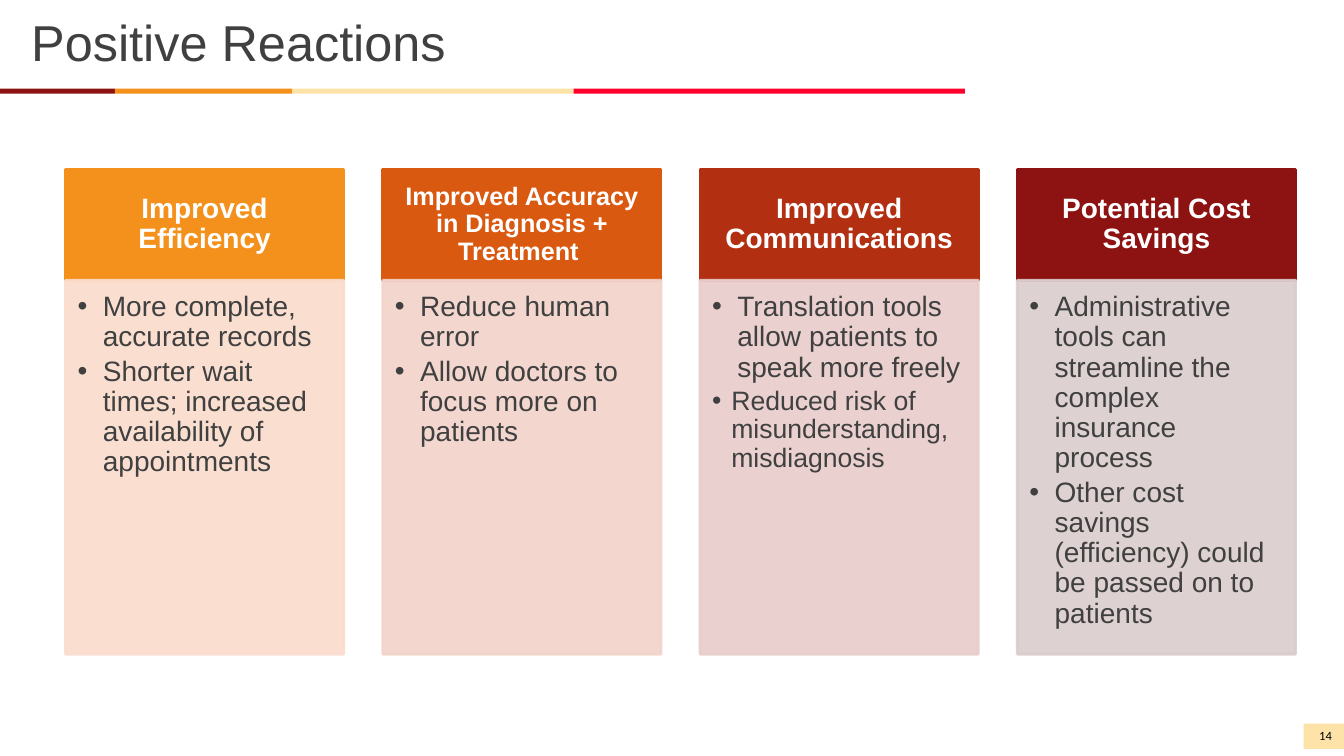
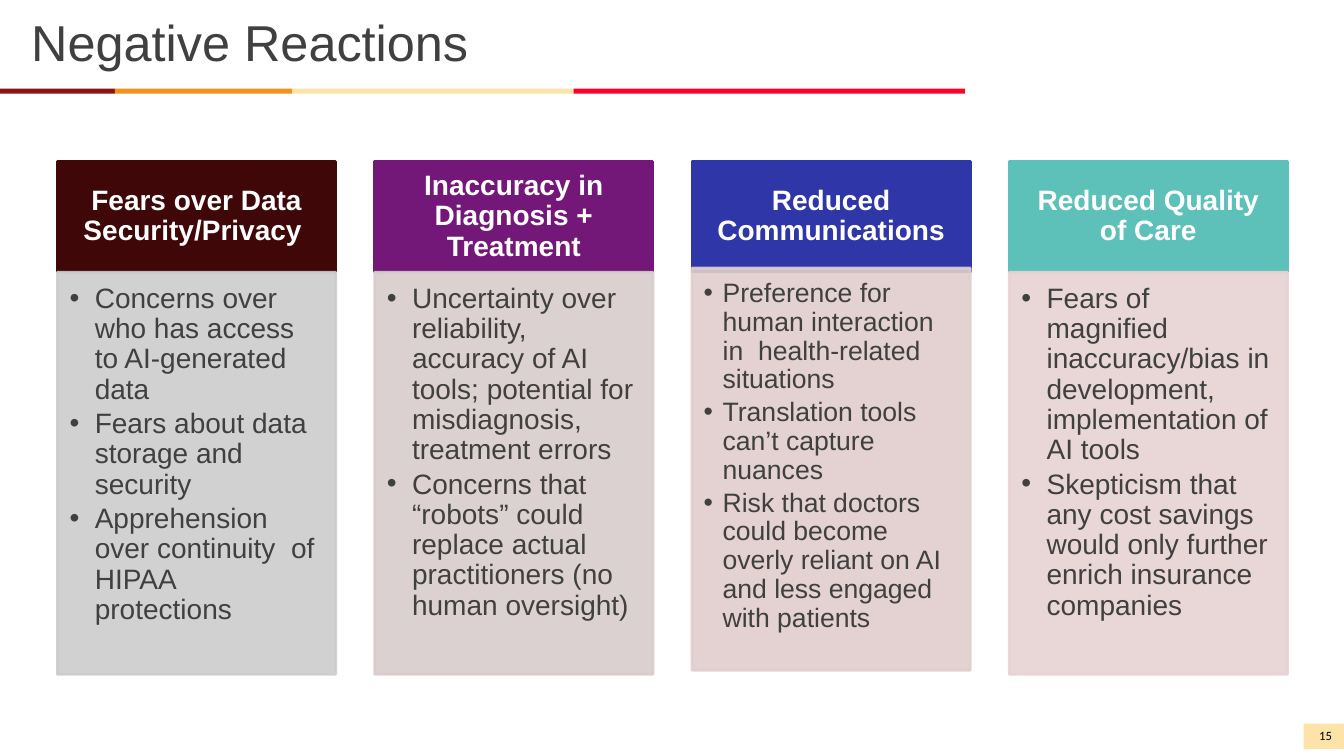
from dataclasses import dataclass

from lxml.etree import SubElement
from pptx import Presentation
from pptx.dml.color import RGBColor
from pptx.enum.shapes import MSO_SHAPE as Preset
from pptx.enum.text import MSO_ANCHOR as Anchor, MSO_AUTO_SIZE as AutoSize, PP_ALIGN as Align
from pptx.oxml.ns import qn
from pptx.util import Inches, Pt


def color(value):
    return RGBColor.from_string(value)


@dataclass
class Column:
    heading: str
    heading_fill: str
    body_fill: str
    items: list
    heading_size: int = 20
    lift: float = 0


class Deck:
    FONT = "Arial"
    INK = "3F403F"
    WHITE = "FFFFFF"
    CREAM = "FDE3A7"
    BANDS = [(1.15, "8D1212"), (1.76, "F3911C"), (2.79, CREAM), (3.88, "FF002C")]
    COLUMN_WIDTH = 2.76
    COLUMN_PITCH = 9.44 / 3
    HEADING_HEIGHT = 1.1

    def __init__(self):
        self.presentation = Presentation()
        self.presentation.slide_width = Inches(13.33)
        self.presentation.slide_height = Inches(7.5)
        self.slide = None

    def add_slide(self, title, number):
        layout = self.presentation.slide_layouts.get_by_name("Comparison")
        self.slide = self.presentation.slides.add_slide(layout)
        self.add_bands()
        self.add_title(title)
        self.add_number(number)

    def place(self, shape, left, top, width, height):
        shape.left, shape.top = Inches(left), Inches(top)
        shape.width, shape.height = Inches(width), Inches(height)

    def set_frame(self, shape, insets, anchor=Anchor.TOP, wrap=True):
        frame = shape.text_frame
        frame.auto_size = AutoSize.NONE
        frame.word_wrap = wrap
        frame.vertical_anchor = anchor
        (frame.margin_left, frame.margin_top,
         frame.margin_right, frame.margin_bottom) = map(Inches, insets)
        return frame

    def add_text(self, paragraph, text, size, ink=INK, align=Align.LEFT,
                 spacing=1.0, after=0, bold=False, font=FONT):
        paragraph.alignment = align
        paragraph.line_spacing = spacing
        paragraph.space_before = Pt(0)
        paragraph.space_after = Pt(after)
        run = paragraph.add_run()
        run.text = text
        run.font.name = font
        run.font.size = Pt(size)
        run.font.bold = bold
        run.font.color.rgb = color(ink)

    def add_bullet(self, paragraph, indent):
        properties = paragraph._p.get_or_add_pPr()
        properties.set("marL", str(Inches(indent)))
        properties.set("indent", str(-Inches(indent)))
        SubElement(properties, qn("a:buFont")).set("typeface", self.FONT)
        SubElement(properties, qn("a:buChar")).set("char", "•")

    def paint(self, shape, fill, line_width=0, alpha=100):
        shape.fill.solid()
        shape.fill.fore_color.rgb = color(fill)
        if line_width:
            shape.line.color.rgb = color(fill)
            shape.line.width = Pt(line_width)
        else:
            shape.line.fill.background()
        if alpha < 100:
            for paint in list(shape._element.spPr.iter(qn("a:srgbClr"))):
                SubElement(paint, qn("a:alpha")).set("val", str(alpha * 1000))

    def add_rectangle(self, left, top, width, height, fill, line_width=0):
        shape = self.slide.shapes.add_shape(
            Preset.RECTANGLE, Inches(left), Inches(top), Inches(width), Inches(height))
        shape.shadow.inherit = False
        self.paint(shape, fill, line_width)
        return shape

    def add_bands(self):
        left = -0.01
        for width, fill in self.BANDS:
            self.add_rectangle(left, 0.88, width, 0.05, fill)
            left += width

    def add_title(self, text):
        title = self.slide.shapes.title
        self.place(title, 0.21, 0.18, 10.01, 1.1)
        frame = self.set_frame(title, (0.1, 0.05, 0.1, 0.05))
        self.add_text(frame.paragraphs[0], text, 36, spacing=0.8)

    def add_number(self, number):
        self.add_rectangle(12.93, 7.18, 0.4, 0.25, self.CREAM)
        box = self.slide.shapes.add_textbox(
            Inches(12.29), Inches(7.1), Inches(0.92), Inches(0.4))
        frame = self.set_frame(box, (0, 0, 0, 0), Anchor.MIDDLE, wrap=False)
        self.add_text(frame.paragraphs[0], str(number), 9, "000000", Align.RIGHT,
                      font="Calibri")

    def add_heading(self, column, left, top):
        shape = self.add_rectangle(left, top, self.COLUMN_WIDTH, self.HEADING_HEIGHT,
                                   column.heading_fill, 2)
        size = column.heading_size
        side, edge = 0.008 * size, 0.0045 * size
        frame = self.set_frame(shape, (side, edge, side, edge), Anchor.MIDDLE)
        self.add_text(frame.paragraphs[0], column.heading, size, self.WHITE,
                      Align.CENTER, 0.9, bold=True)

    def add_list(self, body, column, left, top, height):
        self.slide.shapes._spTree.append(body._element)
        self.place(body, left, top - column.lift, self.COLUMN_WIDTH, height)
        self.paint(body, column.body_fill, 2, alpha=90)
        first_size = column.items[0][1]
        near, far = 0.006 * first_size, 0.008 * first_size
        frame = self.set_frame(body, (near, near, far, 0.17))
        for index, (text, size) in enumerate(column.items):
            paragraph = frame.add_paragraph() if index else frame.paragraphs[0]
            self.add_text(paragraph, text, size, spacing=0.9, after=3)
            self.add_bullet(paragraph, 0.25 if size == 20 else 0.19)

    def add_columns(self, columns, left, top, body_height):
        bodies = [shape for shape in self.slide.placeholders
                  if shape.placeholder_format.idx in range(1, 5)]
        for index, (body, column) in enumerate(zip(bodies, columns)):
            column_left = left + index * self.COLUMN_PITCH
            self.add_heading(column, column_left, top)
            self.add_list(body, column, column_left, top + self.HEADING_HEIGHT, body_height)


POSITIVE = [
    Column("Improved Efficiency", "F3911C", "FADCCD", [
        ("More complete, accurate records", 20),
        ("Shorter wait times; increased availability of appointments", 20)]),
    Column("Improved Accuracy in Diagnosis + Treatment ", "D95911", "F2D3CA", [
        ("Reduce human error", 20),
        ("Allow doctors to focus more on patients", 20)], heading_size=18),
    Column("Improved Communications", "B22F12", "E8CDCA", [
        ("Translation tools allow patients to speak more freely", 20),
        ("Reduced risk of misunderstanding, misdiagnosis", 19)]),
    Column("Potential Cost Savings", "8D1212", "DBCCCC", [
        ("Administrative tools can streamline the complex insurance process", 20),
        ("Other cost savings (efficiency) could be passed on to patients", 20)]),
]

NEGATIVE = [
    Column("Fears over Data Security/Privacy ", "400709", "CCCCCC", [
        ("Concerns over who has access to AI-generated data", 20),
        ("Fears about data storage and security", 20),
        ("Apprehension over continuity  of HIPAA protections", 20)]),
    Column("Inaccuracy in Diagnosis + Treatment", "731778", "D8CCCB", [
        ("Uncertainty over reliability, accuracy of AI tools; "
         "potential for misdiagnosis, treatment errors", 20),
        ("Concerns that “robots” could replace actual practitioners (no human oversight)", 20)]),
    Column("Reduced Communications", "2F36A8", "E0CECD", [
        ("Preference for human interaction in  health-related situations", 19),
        ("Translation tools can’t capture nuances", 19),
        ("Risk that doctors could become overly reliant on AI "
         "and less engaged with patients", 19)], lift=0.04),
    Column("Reduced Quality of Care", "5DC1B9", "E7D2D3", [
        ("Fears of magnified inaccuracy/bias in development, implementation of AI tools", 20),
        ("Skepticism that any cost savings would only further enrich insurance companies", 20)]),
]


def main():
    deck = Deck()
    deck.add_slide("Positive Reactions", 14)
    deck.add_columns(POSITIVE, 0.65, 1.68, 3.71)
    deck.add_slide("Negative Reactions", 15)
    deck.add_columns(NEGATIVE, 0.57, 1.6, 3.99)
    deck.presentation.save("out.pptx")


if __name__ == "__main__":
    main()
